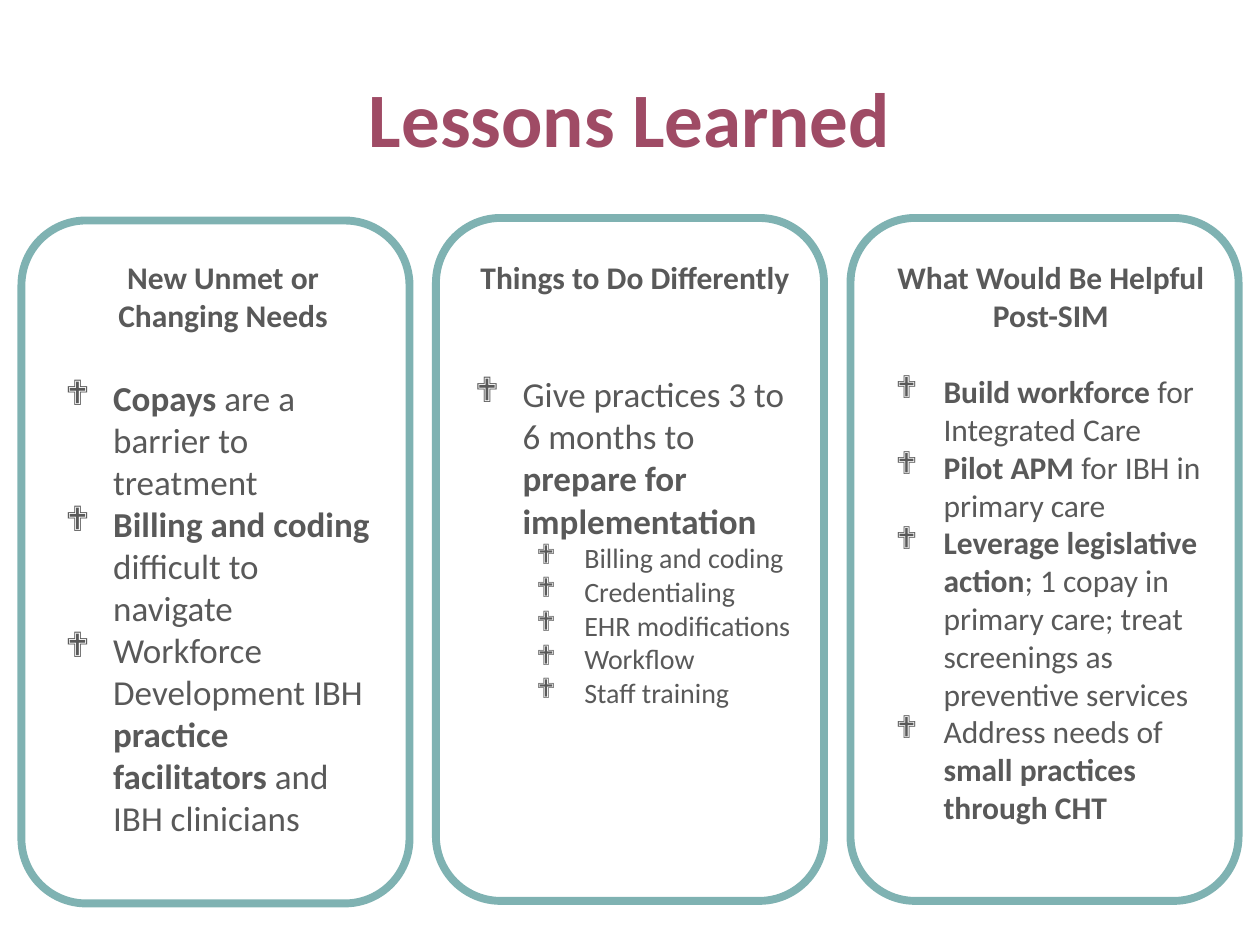
from lxml import etree
from pptx import Presentation
from pptx.dml.color import RGBColor
from pptx.enum.shapes import MSO_SHAPE
from pptx.enum.text import MSO_ANCHOR, MSO_AUTO_SIZE, PP_ALIGN
from pptx.oxml.ns import qn
from pptx.util import Inches, Pt

FONT = "Calibri"
TITLE_COLOR, TEXT_COLOR, FRAME_COLOR = "9F4B65", "595959", "006666"

# Text between asterisks is bold. Each item is (level, size, text).
COLUMNS = [
    dict(frame=(0.17, 1.75), text=(0.33, 2, 2.79, 4.75),
         heading="New Unmet or Changing Needs", gap=24.4,
         items=[(0, 20, "*Copays *are a barrier to treatment"),
                (0, 20, "*Billing and coding *difficult to navigate"),
                (0, 20, "Workforce Development IBH *practice facilitators *"
                        "and IBH clinicians")]),
    dict(frame=(3.46, 1.73), text=(3.58, 2, 2.83, 3.7),
         heading="Things to Do Differently", gap=44,
         items=[(0, 20, "Give practices 3 to 6 months to "
                        "*prepare for implementation*")]
         + [(1, 16, topic) for topic in (
             "Billing and coding", "Credentialing", "EHR modifications",
             "Workflow", "Staff training")]),
    dict(frame=(6.75, 1.73), text=(6.92, 2, 2.75, 4.64),
         heading="What Would Be Helpful Post-SIM", gap=22,
         items=[(0, 18, "*Build workforce *for Integrated Care"),
                (0, 18, "*Pilot APM *for IBH in primary care"),
                (0, 18, "*Leverage legislative action*; 1 copay in primary care; "
                        "treat screenings as preventive services"),
                (0, 18, "Address needs of *small practices through CHT*")]),
]


def color(hex_code):
    return RGBColor.from_string(hex_code)


def add_span(para, text, size, hex_code, bold):
    span = para.add_run()
    span.text = text
    font = span.font
    font.name, font.size, font.bold = FONT, Pt(size), bold
    font.color.rgb = color(hex_code)


def add_marked_text(para, text, size):
    for index, part in enumerate(text.split("*")):
        if part:
            add_span(para, part, size, TEXT_COLOR, index % 2 == 1)


def set_indent(para, left, first=0):
    props = para._p.get_or_add_pPr()
    props.set("marL", str(Inches(left)))
    props.set("indent", str(Inches(first)))
    return props


def add_bullet(para, level):
    para.level = level
    props = set_indent(para, (0.47, 0.96)[level], -0.38)
    etree.SubElement(props, qn("a:buFont")).set("typeface", "Wingdings")
    etree.SubElement(props, qn("a:buChar")).set("char", "❖")


def add_title(page, left, top, width, height):
    title = page.shapes.title
    title.left, title.top = Inches(left), Inches(top)
    title.width, title.height = Inches(width), Inches(height)
    title.text_frame.vertical_anchor = MSO_ANCHOR.MIDDLE
    para = title.text_frame.paragraphs[0]
    para.alignment = PP_ALIGN.CENTER
    add_span(para, "Lessons Learned", 44, TITLE_COLOR, True)


def add_frame(page, left, top, width=3.08, height=5.42):
    frame = page.shapes.add_shape(
        MSO_SHAPE.ROUNDED_RECTANGLE,
        Inches(left), Inches(top), Inches(width), Inches(height))
    frame.shadow.inherit = False
    frame.fill.background()
    frame.line.width = Pt(4.5)
    frame.line.color.rgb = color(FRAME_COLOR)
    shade = frame.line._ln.find(".//" + qn("a:srgbClr"))
    etree.SubElement(shade, qn("a:alpha")).set("val", "50000")


def add_column_text(page, area, heading, gap, items):
    box = page.shapes.add_textbox(*map(Inches, area))
    body = box.text_frame
    body.word_wrap = True
    body.auto_size = MSO_AUTO_SIZE.SHAPE_TO_FIT_TEXT
    para = body.paragraphs[0]
    para.alignment = PP_ALIGN.CENTER
    para.space_after = Pt(gap)
    set_indent(para, 0.09)
    add_span(para, heading, 18, TEXT_COLOR, True)
    for level, size, text in items:
        para = body.add_paragraph()
        add_bullet(para, level)
        add_marked_text(para, text, size)


def main():
    deck = Presentation()
    deck.slide_width, deck.slide_height = Inches(10), Inches(7.5)
    page = deck.slides.add_slide(deck.slide_layouts[5])
    add_title(page, 0.5, 0.3, 9, 1.25)
    for column in COLUMNS:
        add_frame(page, *column["frame"])
        add_column_text(page, column["text"], column["heading"],
                        column["gap"], column["items"])
    deck.save("out.pptx")


if __name__ == "__main__":
    main()
